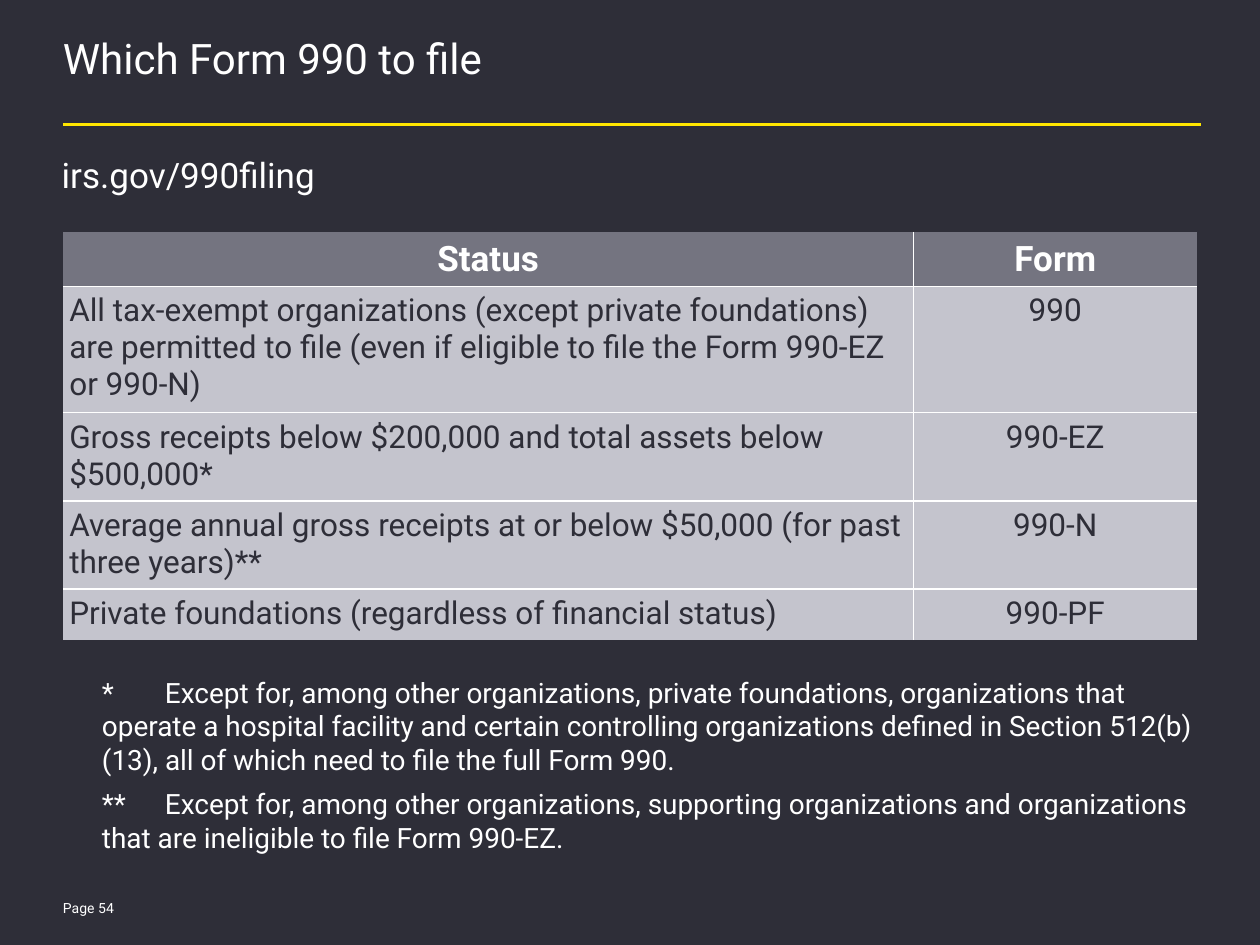
import lxml.etree
import pptx
import pptx.dml.color
import pptx.enum.shapes
import pptx.enum.text
import pptx.oxml.ns
import pptx.util

COLORS = {
    "night": "2E2E38",
    "yellow": "FFE600",
    "white": "FFFFFF",
    "header": "747480",
    "body": "C4C4CD",
}
FONT = "Roboto"
COLUMNS, ROWS = 100, 75
CENTER = pptx.enum.text.PP_ALIGN.CENTER
TOP = pptx.enum.text.MSO_ANCHOR.TOP
MIDDLE = pptx.enum.text.MSO_ANCHOR.MIDDLE
BOTTOM = pptx.enum.text.MSO_ANCHOR.BOTTOM

FORMS = [
    ("Status", "Form"),
    ("All tax-exempt organizations (except private foundations) are permitted "
     "to file (even if eligible to file the Form 990-EZ or 990-N)", "990"),
    ("Gross receipts below $200,000 and total assets below $500,000*", "990-EZ"),
    ("Average annual gross receipts at or below $50,000 (for past three years)**",
     "990-N"),
    ("Private foundations (regardless of financial status)", "990-PF"),
]
ROW_HEIGHTS = [4.3, 9.8, 6.9, 6.9, 3.9]
COLUMN_SHARES = [0.75, 0.25]
FOOTNOTES = [
    ("*", "Except for, among other organizations, private foundations, "
     "organizations that operate a hospital facility and certain controlling "
     "organizations defined in Section 512(b)(13), all of which need to file "
     "the full Form 990."),
    ("**", "Except for, among other organizations, supporting organizations and "
     "organizations that are ineligible to file Form 990-EZ."),
]

deck = pptx.Presentation()
deck.slide_width = pptx.util.Inches(10)
deck.slide_height = pptx.util.Inches(7.5)


def across(columns):
    return round(deck.slide_width * columns / COLUMNS)


def down(rows):
    return round(deck.slide_height * rows / ROWS)


def rgb(name):
    return pptx.dml.color.RGBColor.from_string(COLORS[name])


def style(paragraph, size, color="white", bold=False):
    font = paragraph.font
    font.name, font.size, font.bold = FONT, pptx.util.Pt(size), bold
    font.color.rgb = rgb(color)


def add_text_frame(slide, box, anchor=TOP):
    left, top, width, height = box
    frame = slide.shapes.add_textbox(
        across(left), down(top), across(width), down(height)).text_frame
    frame.word_wrap = True
    frame.vertical_anchor = anchor
    frame.margin_left = frame.margin_right = 0
    frame.margin_top = frame.margin_bottom = 0
    return frame


def add_line_of_text(slide, box, text, size, anchor=TOP, spacing=1.0):
    paragraph = add_text_frame(slide, box, anchor).paragraphs[0]
    paragraph.text = text
    paragraph.line_spacing = spacing
    style(paragraph, size)


def add_heading(slide, box):
    left, top, width, height = box
    add_line_of_text(slide, box, "Which Form 990 to file", 24, spacing=0.85)
    rule_y = down(top + height + 0.2)
    rule = slide.shapes.add_connector(
        pptx.enum.shapes.MSO_CONNECTOR.STRAIGHT,
        across(left), rule_y, across(left + width + 0.3), rule_y)
    rule.line.color.rgb = rgb("yellow")
    rule.line.width = pptx.util.Pt(1.5)
    lxml.etree.SubElement(rule._element.spPr, pptx.oxml.ns.qn("a:effectLst"))


def set_borders(cell, visible):
    qn = pptx.oxml.ns.qn
    properties = cell._tc.get_or_add_tcPr()
    for position, side in enumerate("LRTB"):
        border = lxml.etree.Element(qn(f"a:ln{side}"), w=str(pptx.util.Pt(1)))
        if side in visible:
            fill = lxml.etree.SubElement(border, qn("a:solidFill"))
            lxml.etree.SubElement(fill, qn("a:srgbClr"), val=COLORS["white"])
        else:
            lxml.etree.SubElement(border, qn("a:noFill"))
        properties.insert(position, border)


def add_forms_table(slide, box):
    left, top, width, height = box
    table = slide.shapes.add_table(
        len(FORMS), len(COLUMN_SHARES),
        across(left), down(top), across(width), down(height)).table
    table.horz_banding = False
    for column, share in zip(table.columns, COLUMN_SHARES):
        column.width = across(width * share)
    for r, (row, entries) in enumerate(zip(table.rows, FORMS)):
        row.height = down(ROW_HEIGHTS[r])
        is_header = r == 0
        for c, entry in enumerate(entries):
            cell = table.cell(r, c)
            cell.margin_left = cell.margin_right = across(0.5)
            cell.margin_top = cell.margin_bottom = down(0.5)
            cell.vertical_anchor = BOTTOM if is_header else TOP
            cell.fill.solid()
            cell.fill.fore_color.rgb = rgb("header" if is_header else "body")
            inner = "R" if c == 0 else "L"
            inner += "" if is_header else "T"
            inner += "B" if r < len(FORMS) - 1 else ""
            set_borders(cell, inner)
            paragraph = cell.text_frame.paragraphs[0]
            paragraph.text = entry
            if is_header or c == 1:
                paragraph.alignment = CENTER
            if is_header:
                style(paragraph, 20, bold=True)
            else:
                style(paragraph, 18, "night")


def add_footnotes(slide, box):
    qn = pptx.oxml.ns.qn
    frame = add_text_frame(slide, box)
    for i, (mark, note) in enumerate(FOOTNOTES):
        paragraph = frame.add_paragraph() if i else frame.paragraphs[0]
        paragraph.text = f"\t{mark}\t{note}"
        paragraph.space_after = pptx.util.Pt(6)
        properties = paragraph._p.get_or_add_pPr()
        properties.set("marL", str(across(3.1)))
        properties.set("indent", str(-across(3.1)))
        tabs = lxml.etree.SubElement(properties, qn("a:tabLst"))
        lxml.etree.SubElement(tabs, qn("a:tab"), pos=str(across(2.5)), algn="r")
        style(paragraph, 16)


def build_slide():
    slide = deck.slides.add_slide(deck.slide_layouts[6])
    slide.background.fill.solid()
    slide.background.fill.fore_color.rgb = rgb("night")
    add_heading(slide, (5, 3.2, 90, 6.5))
    add_line_of_text(slide, (4.9, 12.2, 90, 3.4), "irs.gov/990filing", 20)
    add_forms_table(slide, (5, 18.4, 90, sum(ROW_HEIGHTS)))
    add_footnotes(slide, (5, 53.6, 90, 14.3))
    add_line_of_text(slide, (5, 71.1, 6.3, 2), "Page 54", 8, MIDDLE)


if __name__ == "__main__":
    build_slide()
    deck.save("out.pptx")
